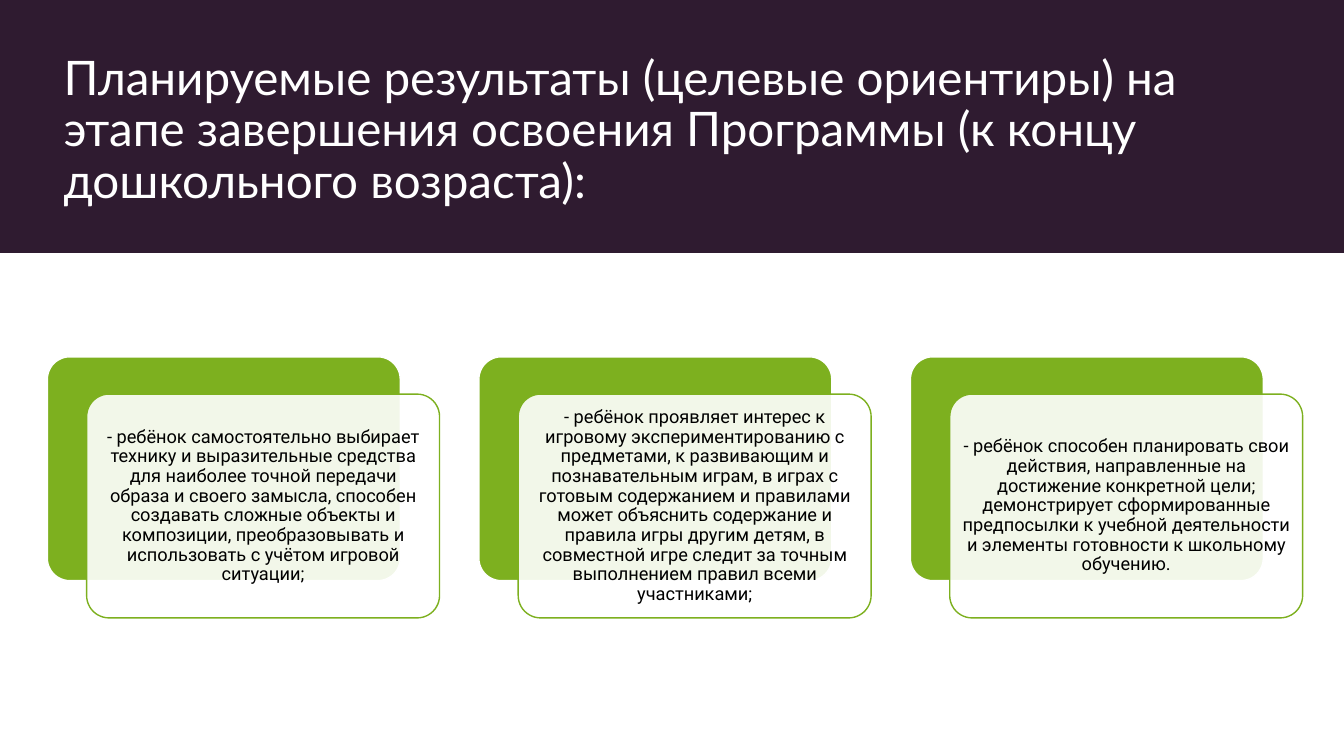
"""Builds the slide with three layered cards of expected results."""
import pptx
import pptx.dml.color
import pptx.enum.shapes
import pptx.enum.text
import pptx.util
from lxml import etree
from pptx.oxml.ns import qn

PX = 9144
GREEN = "7DB01F"
PLUM = "2F1B30"
WHITE = "FFFFFF"
BLACK = "000000"
CARD_LEFT, CARD_TOP, CARD_WIDTH, CARD_HEIGHT = 47, 354, 350, 222
CARD_STEP = 428
FRONT_SHIFT_X, FRONT_SHIFT_Y = 39, 37

TITLE = (
    "Планируемые результаты (целевые ориентиры) на этапе завершения "
    "освоения Программы (к концу дошкольного возраста):"
)
RESULTS = [
    "- ребёнок самостоятельно выбирает технику и выразительные средства для "
    "наиболее точной передачи образа и своего замысла, способен создавать "
    "сложные объекты и композиции, преобразовывать и использовать с учётом "
    "игровой ситуации;",
    "- ребёнок проявляет интерес к игровому экспериментированию с предметами, "
    "к развивающим и познавательным играм, в играх с готовым содержанием и "
    "правилами может объяснить содержание и правила игры другим детям, в "
    "совместной игре следит за точным выполнением правил всеми участниками;",
    "- ребёнок способен планировать свои действия, направленные на достижение "
    "конкретной цели; демонстрирует сформированные предпосылки к учебной "
    "деятельности и элементы готовности к школьному обучению.",
]


def px(length):
    """Turn whole pixels into EMU."""
    return pptx.util.Emu(length * PX)


def color(value):
    """Turn a hex string into a colour."""
    return pptx.dml.color.RGBColor.from_string(value)


def write_text(box, text, *, size, font, fill, align, anchor, inset_x, inset_y):
    """Fill a shape with one formatted paragraph."""
    frame = box.text_frame
    frame.word_wrap = True
    frame.auto_size = pptx.enum.text.MSO_AUTO_SIZE.NONE
    frame.vertical_anchor = anchor
    frame.margin_left = frame.margin_right = px(inset_x)
    frame.margin_top = frame.margin_bottom = px(inset_y)
    para = frame.paragraphs[0]
    para.alignment = align
    para.line_spacing = 0.9
    span = para.add_run()
    span.text = text
    span.font.size = pptx.util.Pt(size)
    span.font.name = font
    span.font.color.rgb = color(fill)


def add_block(page, kind, left, top, width, height, fill, line=None, opacity=100):
    """Add a filled shape with an optional outline and opacity in percent."""
    block = page.shapes.add_shape(kind, px(left), px(top), px(width), px(height))
    block.shadow.inherit = False
    block.fill.solid()
    block.fill.fore_color.rgb = color(fill)
    if opacity < 100:
        tint = block.fill._xPr.find(qn("a:solidFill"))[0]
        etree.SubElement(tint, qn("a:alpha")).set("val", str(opacity * 1000))
    if line:
        block.line.color.rgb = color(line)
        block.line.width = pptx.util.Pt(1)
    else:
        block.line.fill.background()
    return block


def add_card(page, left, text):
    """Add a green plate with a translucent text card in front of it."""
    rounded = pptx.enum.shapes.MSO_SHAPE.ROUNDED_RECTANGLE
    plate = add_block(page, rounded, left, CARD_TOP, CARD_WIDTH, CARD_HEIGHT, GREEN, WHITE)
    card = add_block(page, rounded, left + FRONT_SHIFT_X, CARD_TOP + FRONT_SHIFT_Y,
                     CARD_WIDTH, CARD_HEIGHT, WHITE, GREEN, opacity=90)
    for shape in (plate, card):
        shape.adjustments[0] = 0.1
    write_text(card, text, size=13, font="Roboto", fill=BLACK,
               align=pptx.enum.text.PP_ALIGN.CENTER,
               anchor=pptx.enum.text.MSO_ANCHOR.MIDDLE, inset_x=5, inset_y=5)


def add_title(page):
    """Place the title over a dark band."""
    band = add_block(page, pptx.enum.shapes.MSO_SHAPE.RECTANGLE, 0, 0, 1333, 251, PLUM)
    title = page.shapes.title
    band._element.addnext(title._element)
    title.left, title.top, title.width, title.height = map(px, (53, 40, 1189, 172))
    write_text(title, TITLE, size=34, font="Lato", fill=WHITE,
               align=pptx.enum.text.PP_ALIGN.LEFT,
               anchor=pptx.enum.text.MSO_ANCHOR.BOTTOM, inset_x=10, inset_y=5)


def main():
    """Build and save the deck."""
    deck = pptx.Presentation()
    deck.slide_width, deck.slide_height = px(1333), px(750)
    page = deck.slides.add_slide(deck.slide_layouts[5])
    add_title(page)
    for index, text in enumerate(RESULTS):
        add_card(page, CARD_LEFT + index * CARD_STEP, text)
    deck.save("out.pptx")


if __name__ == "__main__":
    main()
